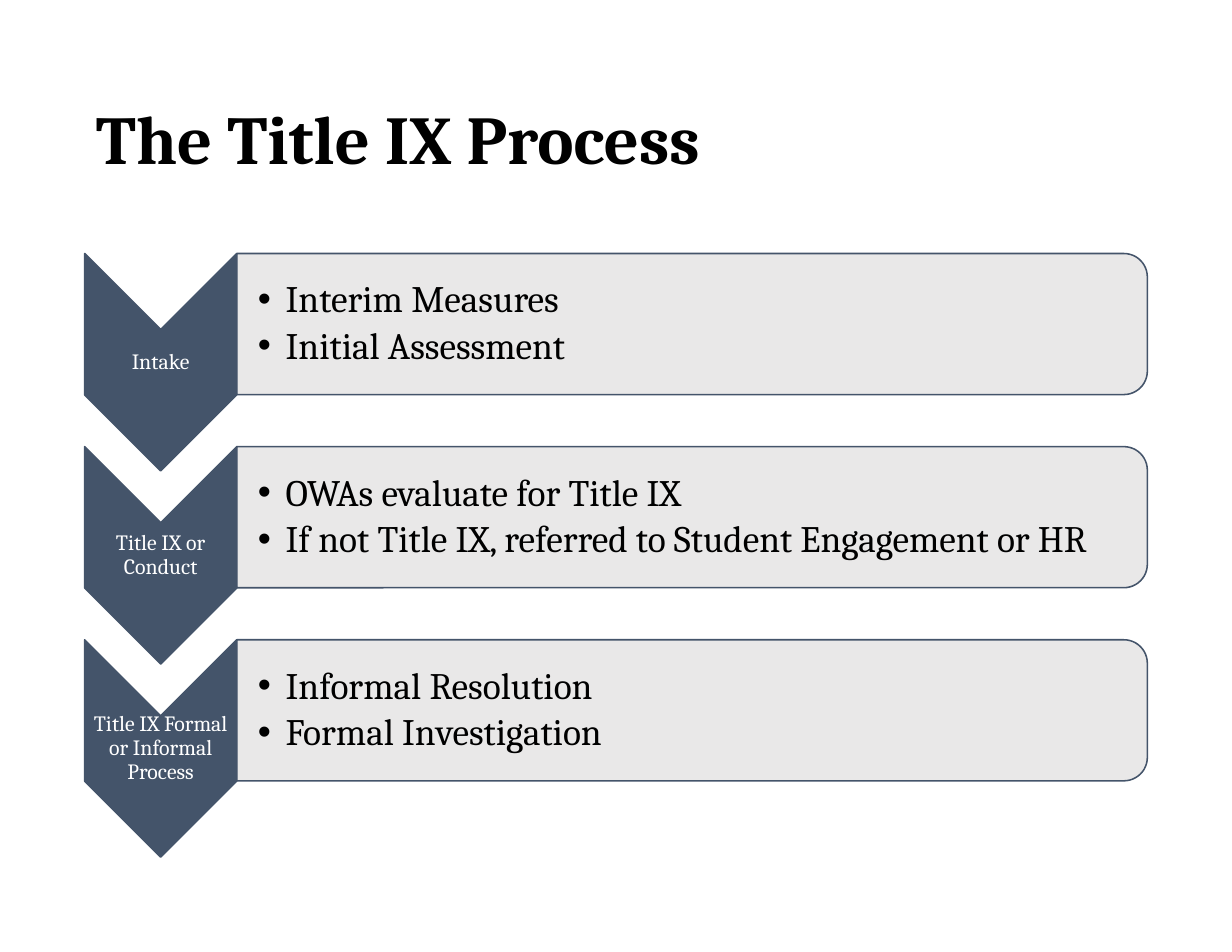
from lxml import etree
from pptx import Presentation
from pptx.dml.color import RGBColor
from pptx.enum.shapes import MSO_SHAPE
from pptx.enum.text import MSO_ANCHOR, MSO_AUTO_SIZE, PP_ALIGN
from pptx.oxml.ns import qn
from pptx.util import Cm, Pt

CHEVRON = MSO_SHAPE.CHEVRON
ROUND_TOP = MSO_SHAPE.ROUND_2_SAME_RECTANGLE
MIDDLE = MSO_ANCHOR.MIDDLE
NO_AUTOFIT = MSO_AUTO_SIZE.NONE
LEFT, CENTER = PP_ALIGN.LEFT, PP_ALIGN.CENTER

FONT = "Cambria"
NAVY, GREY, BLACK, WHITE = "44546A", "E7E6E6", "000000", "FFFFFF"

STAGES = [
    ("Intake", ["Interim Measures", "Initial Assessment"]),
    ("Title IX or Conduct",
     ["OWAs evaluate for Title IX",
      "If not Title IX, referred to Student Engagement or HR"]),
    ("Title IX Formal or Informal Process",
     ["Informal Resolution", "Formal Investigation"]),
]
STAGE_PITCH = 4.38
CHEVRON_WIDTH, CHEVRON_HEIGHT = 3.45, 4.93
PANEL_HEIGHT = 3.2


def paint(color_format, hex_color):
    color_format.rgb = RGBColor.from_string(hex_color)


def style_paragraph(paragraph, size, color, align, bold=False):
    paragraph.alignment = align
    paragraph.line_spacing = 0.9
    for run in paragraph.runs:
        run.font.name = FONT
        run.font.size = Pt(size)
        run.font.bold = bold
        paint(run.font.color, color)


def add_bullet(paragraph):
    properties = paragraph._p.get_or_add_pPr()
    properties.set("marL", str(Cm(0.63)))
    properties.set("indent", str(-Cm(0.63)))
    etree.SubElement(properties, qn("a:buFont")).set("typeface", "Arial")
    etree.SubElement(properties, qn("a:buChar")).set("char", "•")


def add_turned_shape(slide, preset, left, top, width, height, fill, opacity=100):
    """Turn a preset by 90 degrees so that it fills the given box."""
    shape = slide.shapes.add_shape(
        preset, Cm(left + (width - height) / 2), Cm(top + (height - width) / 2),
        Cm(height), Cm(width))
    shape.rotation = 90
    shape.shadow.inherit = False
    shape.fill.solid()
    paint(shape.fill.fore_color, fill)
    if opacity < 100:
        fill_color = shape._element.spPr.find(".//" + qn("a:srgbClr"))
        etree.SubElement(fill_color, qn("a:alpha")).set("val", str(opacity * 1000))
    paint(shape.line.color, NAVY)
    shape.line.width = Pt(1)


def add_text_frame(slide, left, top, width, height, inset, left_inset):
    frame = slide.shapes.add_textbox(
        Cm(left), Cm(top), Cm(width), Cm(height)).text_frame
    frame.word_wrap = True
    frame.vertical_anchor = MIDDLE
    frame.margin_top = frame.margin_right = frame.margin_bottom = Cm(inset)
    frame.margin_left = Cm(left_inset)
    return frame


def add_stage_chevron(slide, label, left, top, width, height):
    add_turned_shape(slide, CHEVRON, left, top, width, height, NAVY)
    label_height = height - width
    frame = add_text_frame(slide, left, top + width / 2, width, label_height,
                           0.02, 0.02)
    frame.text = label
    style_paragraph(frame.paragraphs[0], 14, WHITE, CENTER)


def add_step_panel(slide, steps, left, top, width, height):
    add_turned_shape(slide, ROUND_TOP, left, top, width, height, GREY, opacity=90)
    frame = add_text_frame(slide, left, top + 0.16, width - 0.15, height - 0.32,
                           0.04, 0.48)
    frame.text = "\n".join(steps)
    for paragraph in frame.paragraphs:
        paragraph.level = 1
        add_bullet(paragraph)
        style_paragraph(paragraph, 24, BLACK, LEFT)
        paragraph.space_after = Pt(4)


def add_process(slide, left, top, width):
    for row, (label, steps) in enumerate(STAGES):
        stage_top = top + row * STAGE_PITCH
        add_stage_chevron(slide, label, left, stage_top,
                          CHEVRON_WIDTH, CHEVRON_HEIGHT)
        add_step_panel(slide, steps, left + CHEVRON_WIDTH, stage_top,
                       width - CHEVRON_WIDTH, PANEL_HEIGHT)


def place_title(slide, heading, left, top, width, height):
    title = slide.shapes.title
    title.left, title.top = Cm(left), Cm(top)
    title.width, title.height = Cm(width), Cm(height)
    frame = title.text_frame
    frame.text = heading
    frame.auto_size = NO_AUTOFIT
    frame.vertical_anchor = MIDDLE
    style_paragraph(frame.paragraphs[0], 44, BLACK, LEFT, bold=True)


def main():
    deck = Presentation()
    deck.slide_width, deck.slide_height = Cm(27.94), Cm(21.59)
    slide = deck.slides.add_slide(deck.slide_layouts.get_by_name("Title Only"))
    place_title(slide, "The Title IX Process", 1.92, 1.15, 24.1, 4.17)
    add_process(slide, 1.92, 5.75, 24.1)
    deck.save("out.pptx")


if __name__ == "__main__":
    main()
